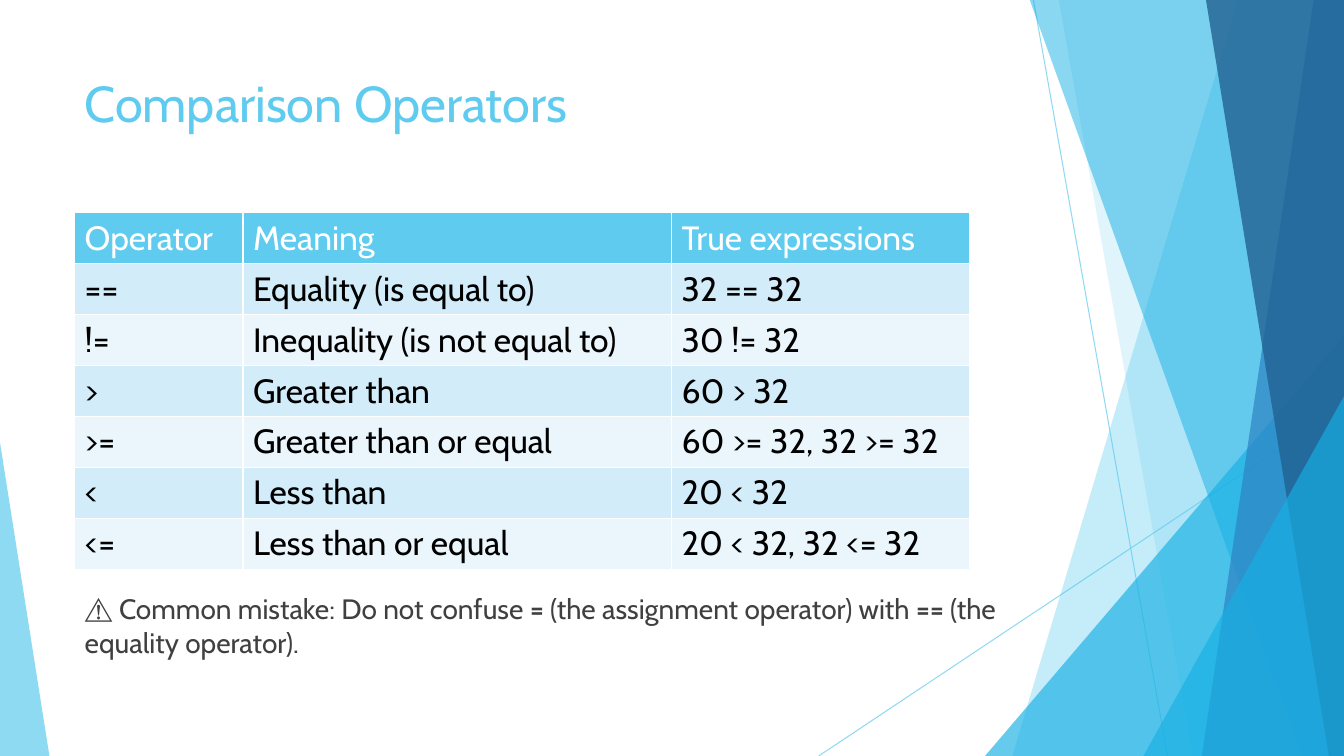
from pptx import Presentation
from pptx.dml.color import RGBColor
from pptx.enum.shapes import MSO_CONNECTOR, MSO_SHAPE
from pptx.enum.text import MSO_ANCHOR, MSO_AUTO_SIZE, PP_ALIGN
from pptx.oxml.ns import qn
from pptx.util import Pt
from lxml import etree

PX = 9144
WIDTH, HEIGHT = 1333, 750
STRAIGHT = MSO_CONNECTOR.STRAIGHT
TRIANGLE = MSO_SHAPE.ISOSCELES_TRIANGLE
LEFT = PP_ALIGN.LEFT
TOP = MSO_ANCHOR.TOP
NO_AUTOFIT = MSO_AUTO_SIZE.NONE

FONT = "Cabin"
SKY, CYAN, BLUE, NAVY = "5FCBEF", "17B0E4", "2E83C3", "226292"
WHITE, BLACK, GRAY = "FFFFFF", "000000", "404040"
ROW_FILLS = ("EAF6FC", "D2ECF9")

RAYS = [((1025, 0), (1158, 750)), ((1333, 403), (812, 750))]
BACK_BANDS = [(1228, 1004, SKY, 36), (1050, 1183, SKY, 20)]
FRONT_BANDS = [
    (1021, 1291, CYAN, 50),
    (1303, 1192, BLUE, 70),
    (1196, 1318, NAVY, 80),
]
COLUMN_WIDTHS = (167, 425, 296)
ROW_HEIGHT = 50
OPERATORS = [
    ("Operator", "Meaning", "True expressions"),
    ("==", "Equality (is equal to)", "32 == 32"),
    ("!=", "Inequality (is not equal to)", "30 != 32"),
    (">", "Greater than", "60 > 32"),
    (">=", "Greater than or equal", "60 >= 32, 32 >= 32"),
    ("<", "Less than", "20 < 32"),
    ("<=", "Less than or equal", "20 < 32, 32 <= 32"),
]
MISTAKE = [
    ("⚠️ Common mistake: Do not confuse ", False),
    ("=", True),
    (" (the assignment operator) with ", False),
    ("==", True),
    (" (the equality operator).", False),
]


def color(value):
    return RGBColor.from_string(value)


def set_opacity(shape, percent):
    for node in shape._element.spPr.iter(qn("a:srgbClr")):
        etree.SubElement(node, qn("a:alpha")).set("val", str(percent * 1000))


def style_font(paragraph, size, value):
    font = paragraph.font
    font.name = FONT
    font.size = Pt(size)
    font.color.rgb = color(value)


def paint(shape, value, opacity):
    shape.shadow.inherit = False
    shape.fill.solid()
    shape.fill.fore_color.rgb = color(value)
    shape.line.fill.background()
    set_opacity(shape, opacity)


def add_ray(slide, start, end):
    ray = slide.shapes.add_connector(STRAIGHT, *(PX * value for value in start + end))
    ray.line.color.rgb = color(SKY)
    ray.line.width = Pt(0.75)
    set_opacity(ray, 70)
    etree.SubElement(ray._element.spPr, qn("a:effectLst"))


def add_band(slide, top_left, bottom_left, value, opacity):
    builder = slide.shapes.build_freeform(top_left, -1, scale=PX)
    builder.add_line_segments([(WIDTH, -1), (WIDTH, HEIGHT), (bottom_left, HEIGHT)])
    paint(builder.convert_to_shape(), value, opacity)


def add_triangle(slide, left, top, width, apex, value, opacity):
    triangle = slide.shapes.add_shape(
        TRIANGLE, left * PX, top * PX, width * PX, (HEIGHT - top) * PX
    )
    triangle.adjustments[0] = apex
    paint(triangle, value, opacity)


def add_facets(slide):
    for start, end in RAYS:
        add_ray(slide, start, end)
    for band in BACK_BANDS:
        add_band(slide, *band)
    add_triangle(slide, 977, 333, 356, 1, CYAN, 66)
    for band in FRONT_BANDS:
        add_band(slide, *band)
    add_triangle(slide, 1134, 393, 199, 1, CYAN, 66)
    add_triangle(slide, 0, 439, 49, 0, SKY, 70)


def fill_placeholder(slide, placeholder, top, height, runs, size, value):
    slide.shapes._spTree.append(placeholder._element)
    placeholder.left, placeholder.top = 74 * PX, top * PX
    placeholder.width, placeholder.height = 940 * PX, height * PX
    frame = placeholder.text_frame
    frame.word_wrap = True
    frame.auto_size = NO_AUTOFIT
    frame.vertical_anchor = TOP
    paragraph = frame.paragraphs[0]
    paragraph.alignment = LEFT
    style_font(paragraph, size, value)
    for text, bold in runs:
        run = paragraph.add_run()
        run.text = text
        run.font.bold = bold
    return paragraph


def remove_bullet(paragraph):
    properties = paragraph._p.get_or_add_pPr()
    properties.set("marL", "0")
    properties.set("indent", "0")
    bullet = etree.Element(qn("a:buNone"))
    properties.find(qn("a:defRPr")).addprevious(bullet)


def add_operator_table(slide):
    table = slide.shapes.add_table(
        len(OPERATORS), len(COLUMN_WIDTHS), 74 * PX, 211 * PX,
        sum(COLUMN_WIDTHS) * PX, len(OPERATORS) * ROW_HEIGHT * PX,
    ).table
    for column, width in zip(table.columns, COLUMN_WIDTHS):
        column.width = width * PX
    for row_index, texts in enumerate(OPERATORS):
        header = row_index == 0
        for column_index, text in enumerate(texts):
            cell = table.cell(row_index, column_index)
            cell.text = text
            cell.fill.solid()
            cell.fill.fore_color.rgb = color(SKY if header else ROW_FILLS[row_index % 2])
            paragraph = cell.text_frame.paragraphs[0]
            style_font(paragraph, 24, WHITE if header else BLACK)
            paragraph.font.bold = False


def main():
    presentation = Presentation()
    presentation.slide_width = WIDTH * PX
    presentation.slide_height = HEIGHT * PX
    slide = presentation.slides.add_slide(presentation.slide_layouts[1])
    title, body = slide.placeholders
    add_facets(slide)
    fill_placeholder(slide, title, 67, 144, [("Comparison Operators", False)], 36, SKY)
    note = fill_placeholder(slide, body, 582, 80, MISTAKE, 20, GRAY)
    note.space_before = Pt(10)
    remove_bullet(note)
    add_operator_table(slide)
    presentation.save("out.pptx")


if __name__ == "__main__":
    main()
